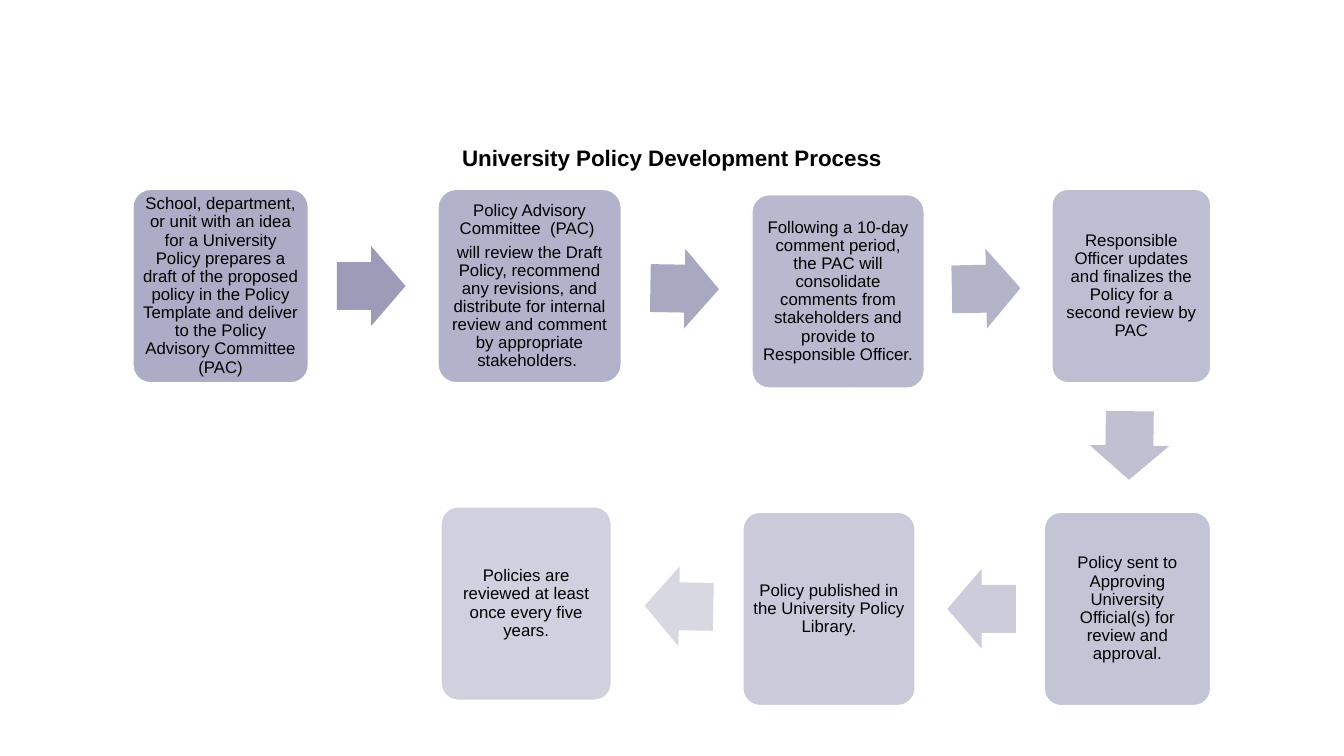
from math import atan2, cos, degrees, sin
from lxml import etree
from pptx import Presentation
from pptx.dml.color import RGBColor
from pptx.enum.shapes import MSO_SHAPE
from pptx.enum.text import MSO_ANCHOR, PP_ALIGN
from pptx.oxml.ns import qn
from pptx.util import Pt

ROUND, ARROW = MSO_SHAPE.ROUNDED_RECTANGLE, MSO_SHAPE.RIGHT_ARROW
MIDDLE, BOTTOM = MSO_ANCHOR.MIDDLE, MSO_ANCHOR.BOTTOM
CENTER = PP_ALIGN.CENTER

TITLE = "University Policy Development Process"
STEPS = [
    (95, 135.2, 125.3, ["School, department, or unit with an idea for a University Policy "
     "prepares a draft of the proposed policy in the Policy Template and deliver to the "
     "Policy Advisory Committee (PAC)"]),
    (312.8, 135.2, 131, ["Policy Advisory Committee  (PAC) ",
     "will review the Draft Policy, recommend any revisions, and distribute for internal "
     "review and comment by appropriate stakeholders. "]),
    (537.1, 139, 123.1, ["Following a 10-day comment period, the PAC will consolidate comments "
     "from stakeholders and provide to Responsible Officer. "]),
    (751.4, 135.2, 113.5, ["Responsible Officer updates and finalizes the Policy for a second "
     "review by PAC"]),
    (745.9, 365.8, 118.8, ["Policy sent to Approving University Official(s) for review and "
     "approval."]),
    (530.6, 365.8, 123.1, ["Policy published in the University Policy Library."]),
    (315, 362, 121.7, ["Policies are reviewed at least once every five years."]),
]
COLORS = {"box": "A3A3C1", "edge": "FFFFFF", "text": "000000"}
ARROWS = ["9C9CB8", "A8A8C1", "B4B4C9", "C0C0D2", "CCCCDA", "D8D8E3"]
HIGH, LONG, WIDE, SHIFT = 138.2, 49, 57, 1.4


def write(frame, lines, size=12, bold=False, anchor=MIDDLE, after=4.2, inset=3.6):
    frame.word_wrap = True
    frame.vertical_anchor = anchor
    frame.margin_left = frame.margin_right = Pt(inset)
    frame.margin_top = frame.margin_bottom = Pt(3.6)
    for i, line in enumerate(lines):
        para = frame.paragraphs[0] if i == 0 else frame.add_paragraph()
        para.alignment = CENTER
        para.line_spacing = 0.9
        para.space_before = Pt(0)
        para.space_after = Pt(after)
        run = para.add_run()
        run.text = line
        font = run.font
        font.name, font.size, font.bold = "Arial", Pt(size), bold
        font.color.rgb = RGBColor.from_string(COLORS["text"])


def draw(slide, kind, area, color):
    shape = slide.shapes.add_shape(kind, *map(Pt, area))
    shape.shadow.inherit = False
    shape.fill.solid()
    shape.fill.fore_color.rgb = RGBColor.from_string(color)
    shape.line.fill.background()
    return shape


def add_box(slide, step, alpha):
    left, top, width, lines = step
    box = draw(slide, ROUND, (left, top, width, HIGH), COLORS["box"])
    box.adjustments[0] = 0.1
    box.line.color.rgb = RGBColor.from_string(COLORS["edge"])
    box.line.width = Pt(1)
    tint = box.fill._xPr.find(qn("a:solidFill"))[0]
    etree.SubElement(tint, qn("a:alpha")).set("val", str(round(alpha * 1000)))
    write(box.text_frame, lines)


def middle(start, size, other, span):
    if start + size <= other:
        return (start + size + other) / 2
    if other + span <= start:
        return (other + span + start) / 2
    return (start + size / 2 + other + span / 2) / 2


def add_arrow(slide, first, second, color):
    (x1, y1, w1, _), (x2, y2, w2, _) = first, second
    turn = atan2(y2 - y1, x2 + w2 / 2 - x1 - w1 / 2)
    x = middle(x1, w1, x2, w2) - SHIFT * cos(turn)
    y = middle(y1, HIGH, y2, HIGH) - SHIFT * sin(turn)
    arrow = draw(slide, ARROW, (x - LONG / 2, y - WIDE / 2, LONG, WIDE), color)
    arrow.adjustments[0], arrow.adjustments[1] = 0.6, 0.5
    arrow.rotation = degrees(turn) % 360


def main():
    deck = Presentation()
    deck.slide_width, deck.slide_height = Pt(960), Pt(540)
    slide = deck.slides.add_slide(deck.slide_layouts[5])
    title = slide.shapes.title
    title.left, title.top, title.width, title.height = map(Pt, (66, 88.6, 828, 37.4))
    write(title.text_frame, [TITLE], size=16, bold=True, anchor=BOTTOM, after=0, inset=7.2)
    last = len(STEPS) - 1
    for i, step in enumerate(STEPS):
        add_box(slide, step, 90 - 40 * i / last)
        if i < last:
            add_arrow(slide, step, STEPS[i + 1], ARROWS[i])
    deck.save("out.pptx")


if __name__ == "__main__":
    main()
